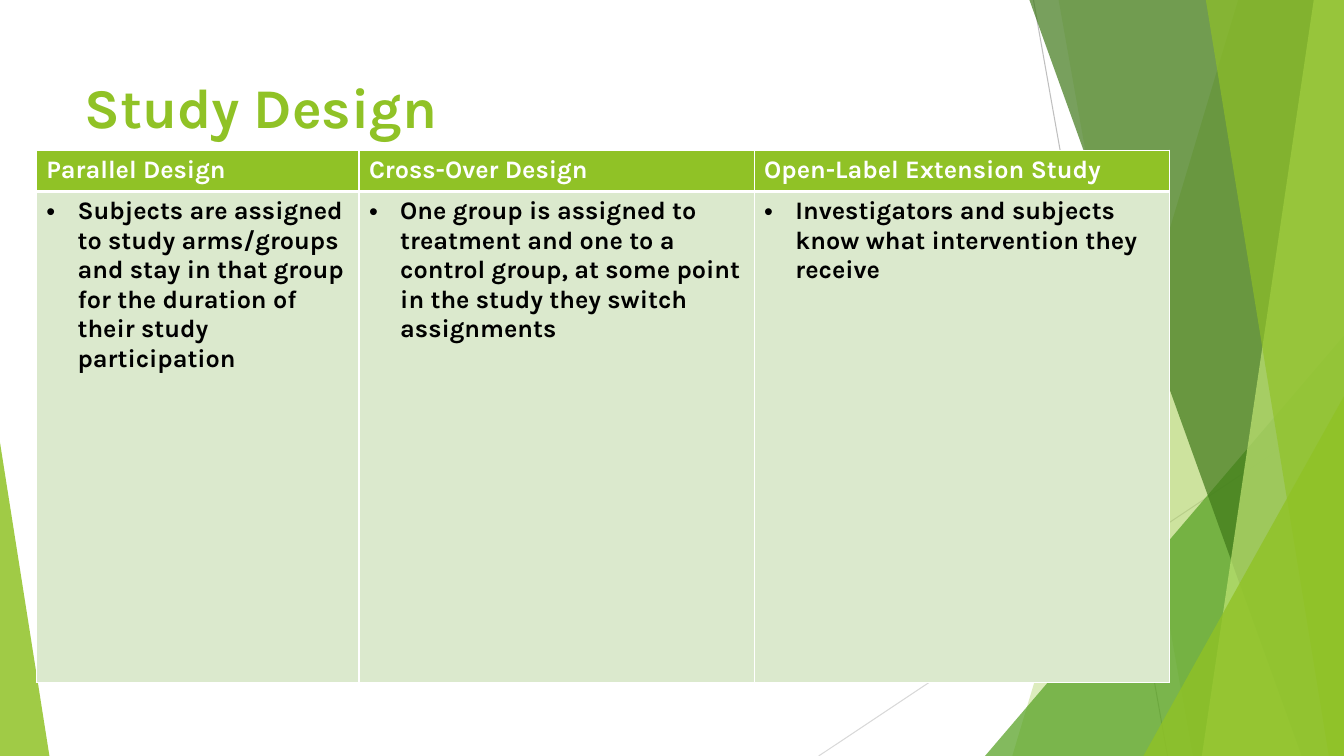
from lxml.etree import SubElement
from pptx import Presentation
from pptx.dml.color import RGBColor
from pptx.enum.shapes import MSO_CONNECTOR, MSO_SHAPE
from pptx.enum.text import MSO_ANCHOR
from pptx.oxml.ns import qn
from pptx.util import Inches, Pt

W, H = 13.33, 7.5
FONT = "Karla"
GREEN, WHITE, BLACK, PALE = "90C226", "FFFFFF", "000000", "DBE9CD"

TITLE = "Study Design"
DESIGNS = [
    ("Parallel Design",
     "Subjects are assigned to study arms/groups and stay in that group "
     "for the duration of their study participation"),
    ("Cross-Over Design",
     "One group is assigned to treatment and one to a control group, "
     "at some point in the study they switch assignments"),
    ("Open-Label Extension Study",
     "Investigators and subjects know what intervention they receive"),
]
COL_WIDTHS = [3.2, 3.92, 4.12]
ROW_HEIGHTS = [0.41, 4.87]
TABLE_LEFT, TABLE_TOP = 0.36, 1.49
BULLET_INDENT = 0.31

# start, end, colour
RULES = [((10.25, 0), (11.58, H), "BFBFBF"), ((W, 4.03), (8.12, H), "D9D9D9")]
# Bands reach the right edge: top-left x, bottom-left x, colour, opacity %
# Wedges stand on the bottom edge: left, top, width, apex (0 left, 1 right), colour, opacity %
FACETS = [
    ("band", 12.28, 10.04, GREEN, 30),
    ("band", 10.5, 11.83, GREEN, 20),
    ("wedge", 9.77, 3.33, 3.56, 1, "54A021", 72),
    ("band", 10.21, 12.91, "3F7819", 70),
    ("band", 13.03, 11.92, "C0E474", 70),
    ("band", 11.96, 13.18, GREEN, 65),
    ("wedge", 11.34, 3.93, 1.99, 1, GREEN, 80),
    ("wedge", 0, 4.39, 0.49, 0, GREEN, 85),
]


def rgb(value):
    return RGBColor.from_string(value)


def paint(sp, color, opacity):
    sp.shadow.inherit = False
    sp.fill.solid()
    sp.fill.fore_color.rgb = rgb(color)
    sp.line.fill.background()
    clr = sp.fill._xPr.find(".//" + qn("a:srgbClr"))
    SubElement(clr, qn("a:alpha"), val=str(opacity * 1000))


def add_rule(shapes, start, end, color):
    ends = [Inches(v) for v in (*start, *end)]
    line = shapes.add_connector(MSO_CONNECTOR.STRAIGHT, *ends)
    line.line.color.rgb = rgb(color)
    line.line.width = Pt(0.75)
    SubElement(line._element.spPr, qn("a:effectLst"))


def add_band(shapes, top_x, bottom_x, color, opacity):
    corners = [(Inches(x), Inches(y))
               for x, y in [(top_x, 0), (W, 0), (W, H), (bottom_x, H)]]
    outline = shapes.build_freeform(*corners[0])
    outline.add_line_segments(corners[1:], close=True)
    paint(outline.convert_to_shape(), color, opacity)


def add_wedge(shapes, left, top, width, apex, color, opacity):
    box = [Inches(v) for v in (left, top, width, H - top)]
    sp = shapes.add_shape(MSO_SHAPE.ISOSCELES_TRIANGLE, *box)
    sp.adjustments[0] = apex
    paint(sp, color, opacity)


def write(p, text, size, color):
    r = p.add_run()
    r.text = text
    font = {"name": FONT, "size": Pt(size), "bold": True}
    for key, value in font.items():
        setattr(r.font, key, value)
    r.font.color.rgb = rgb(color)


def add_bullet(p):
    pPr = p._p.get_or_add_pPr()
    pPr.set("marL", str(Inches(BULLET_INDENT)))
    pPr.set("indent", str(-Inches(BULLET_INDENT)))
    SubElement(pPr, qn("a:buFont"), typeface="Arial")
    SubElement(pPr, qn("a:buChar"), char="•")


def add_borders(cell, widths):
    """Draw white borders; widths are points by side, in the order L, R, T, B."""
    tcPr = cell._tc.get_or_add_tcPr()
    for i, (side, width) in enumerate(widths.items()):
        ln = SubElement(tcPr, qn("a:ln" + side), w=str(Pt(width)))
        SubElement(SubElement(ln, qn("a:solidFill")), qn("a:srgbClr"), val=WHITE)
        tcPr.insert(i, ln)


def add_design_table(shapes):
    box = [Inches(v) for v in (TABLE_LEFT, TABLE_TOP, sum(COL_WIDTHS), sum(ROW_HEIGHTS))]
    table = shapes.add_table(len(ROW_HEIGHTS), len(DESIGNS), *box).table
    table.horz_banding = False
    for row, height in zip(table.rows, ROW_HEIGHTS):
        row.height = Inches(height)
    for c, (texts, width) in enumerate(zip(DESIGNS, COL_WIDTHS)):
        table.columns[c].width = Inches(width)
        for r, text in enumerate(texts):
            header = r == 0
            cell = table.cell(r, c)
            cell.fill.solid()
            cell.fill.fore_color.rgb = rgb(GREEN if header else PALE)
            add_borders(cell, {"L": 1, "R": 1, "T": 1 if header else 3,
                               "B": 3 if header else 1})
            p = cell.text_frame.paragraphs[0]
            if not header:
                add_bullet(p)
            write(p, text, 18, WHITE if header else BLACK)


def main():
    prs = Presentation()
    prs.slide_width, prs.slide_height = Inches(W), Inches(H)
    shapes = prs.slides.add_slide(prs.slide_layouts[6]).shapes

    for rule in RULES:
        add_rule(shapes, *rule)
    draw = {"band": add_band, "wedge": add_wedge}
    for kind, *facet in FACETS:
        draw[kind](shapes, *facet)

    title = shapes.add_textbox(*[Inches(v) for v in (0.74, 0.67, 9.4, 1.44)])
    tf = title.text_frame
    tf.word_wrap = True
    tf.vertical_anchor = MSO_ANCHOR.TOP
    write(tf.paragraphs[0], TITLE, 40, GREEN)

    add_design_table(shapes)
    prs.save("out.pptx")


if __name__ == "__main__":
    main()
